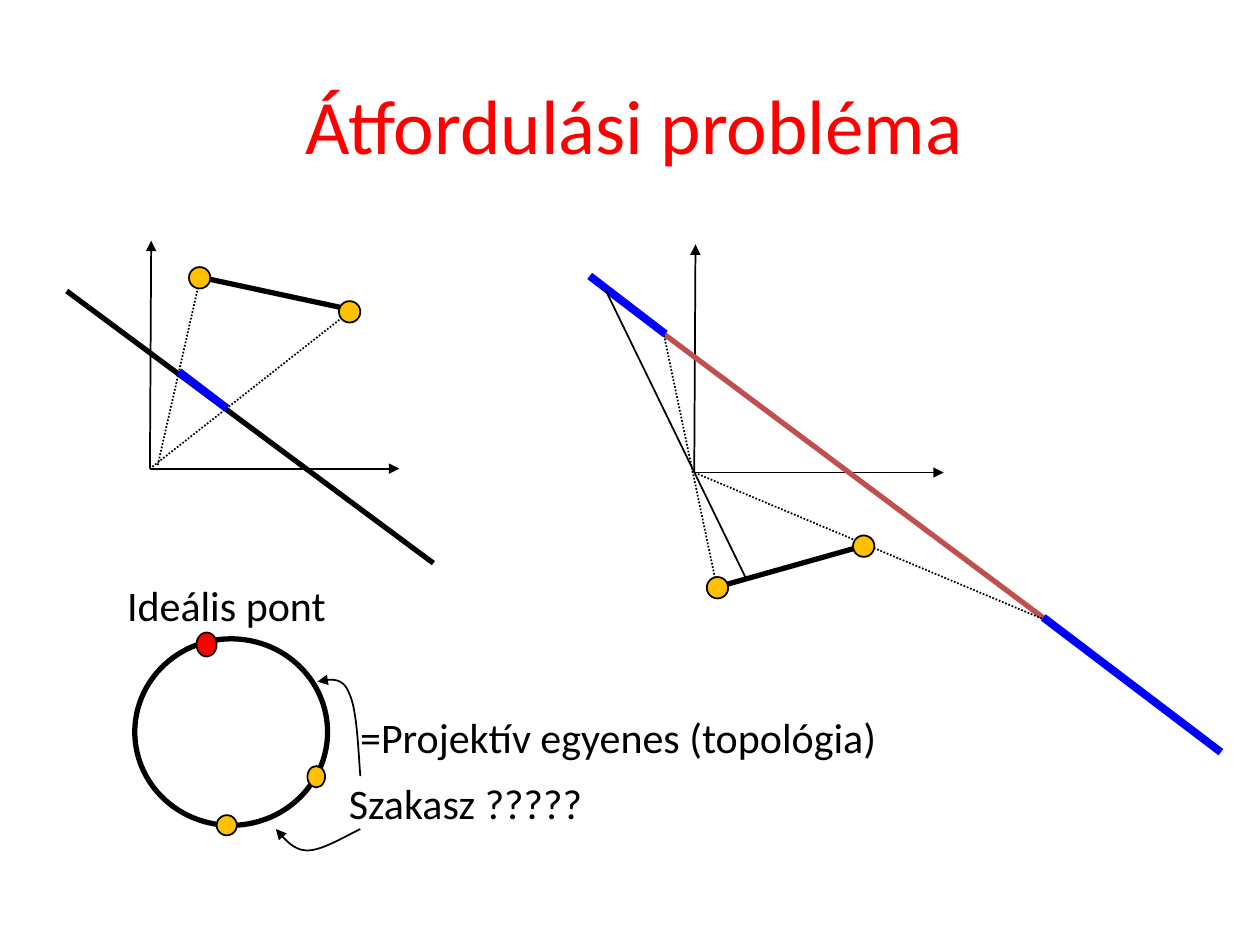
from dataclasses import dataclass

from lxml.etree import SubElement
from pptx import Presentation
from pptx.dml.color import RGBColor
from pptx.enum.dml import MSO_LINE
from pptx.enum.shapes import MSO_CONNECTOR, MSO_SHAPE
from pptx.enum.text import MSO_ANCHOR, MSO_AUTO_SIZE, PP_ALIGN
from pptx.oxml.ns import qn
from pptx.util import Emu, Pt

SCALE = 9144  # EMU in one px, 100 px to the inch


def px(value):
    return Emu(round(value * SCALE))


@dataclass(frozen=True)
class Theme:
    font: str = "Calibri"
    title_size: int = 44
    label_size: int = 24
    thin: float = 1
    thick: float = 3
    heavy: float = 4.5
    ink: str = "000000"
    red: str = "FF0000"
    blue: str = "0000FF"
    brick: str = "C0504D"
    amber: str = "FFC000"


def bezier(start, first, second, end, steps=16):
    """Points along a cubic curve, without its start."""
    for step in range(1, steps + 1):
        t = step / steps
        weights = ((1 - t) ** 3, 3 * t * (1 - t) ** 2, 3 * t * t * (1 - t), t ** 3)
        yield tuple(
            sum(weight * value for weight, value in zip(weights, axis))
            for axis in zip(start, first, second, end)
        )


class SlideBuilder:
    def __init__(self, slide, theme):
        self.slide = slide
        self.theme = theme

    def add_text(self, paragraph, text, size, color):
        run = paragraph.add_run()
        run.text = text
        run.font.name = self.theme.font
        run.font.size = Pt(size)
        run.font.color.rgb = RGBColor.from_string(color)

    def stroke(self, shape, color, width, dotted=False, arrow=False):
        shape.line.color.rgb = RGBColor.from_string(color)
        shape.line.width = Pt(width)
        if dotted:
            shape.line.dash_style = MSO_LINE.ROUND_DOT
        if arrow:
            outline = shape.element.spPr.find(qn("a:ln"))
            SubElement(outline, qn("a:tailEnd"), type="triangle")

    def title(self, text, left, top, width, height):
        shape = self.slide.shapes.title
        shape.left, shape.top = px(left), px(top)
        shape.width, shape.height = px(width), px(height)
        frame = shape.text_frame
        frame.vertical_anchor = MSO_ANCHOR.MIDDLE
        paragraph = frame.paragraphs[0]
        paragraph.alignment = PP_ALIGN.CENTER
        self.add_text(paragraph, text, self.theme.title_size, self.theme.red)

    def label(self, text, left, top, width, height=51):
        shape = self.slide.shapes.add_textbox(px(left), px(top), px(width), px(height))
        frame = shape.text_frame
        frame.word_wrap = False
        frame.auto_size = MSO_AUTO_SIZE.SHAPE_TO_FIT_TEXT
        self.add_text(frame.paragraphs[0], text, self.theme.label_size, self.theme.ink)

    def line(self, start, end, width=None, color=None, **style):
        connector = self.slide.shapes.add_connector(
            MSO_CONNECTOR.STRAIGHT, *map(px, start + end))
        self.stroke(connector, color or self.theme.ink, width or self.theme.thin, **style)
        SubElement(connector.element.spPr, qn("a:effectLst"))

    def axes(self, origin_x, origin_y):
        origin = (origin_x, origin_y)
        self.line(origin, (origin_x + 1, origin_y - 181), arrow=True)
        self.line(origin, (origin_x + 198, origin_y), arrow=True)

    def ellipse(self, left, top, width, height, fill=None, outline=None):
        shape = self.slide.shapes.add_shape(
            MSO_SHAPE.OVAL, px(left), px(top), px(width), px(height))
        shape.shadow.inherit = False
        if fill:
            shape.fill.solid()
            shape.fill.fore_color.rgb = RGBColor.from_string(fill)
        else:
            shape.fill.background()
        self.stroke(shape, self.theme.ink, outline or self.theme.thin)

    def curved_arrow(self, start, *curves):
        points, current = [], start
        for curve in curves:
            points.extend(bezier(current, *curve))
            current = curve[-1]
        builder = self.slide.shapes.build_freeform(*map(px, start))
        builder.add_line_segments([tuple(map(px, point)) for point in points], close=False)
        shape = builder.convert_to_shape()
        shape.shadow.inherit = False
        shape.fill.background()
        self.stroke(shape, self.theme.ink, self.theme.thin, arrow=True)


def main():
    theme = Theme()
    presentation = Presentation()
    presentation.slide_width, presentation.slide_height = px(1000), px(750)
    slide = presentation.slides.add_slide(presentation.slide_layouts[5])
    builder = SlideBuilder(slide, theme)

    builder.title("Átfordulási probléma", 43, 36, 921, 125)

    # Left diagram: the segment lies in front of the centre
    builder.axes(119, 372)
    builder.line((53, 231), (344, 447), theme.thick)
    builder.line((278, 247), (119, 372), dotted=True)
    builder.line((159, 220), (125, 370), dotted=True)
    builder.line((159, 220), (275, 245), theme.thick)
    builder.line((142, 295), (180, 324), theme.heavy, theme.blue)

    # Right diagram: the image wraps around through infinity
    builder.axes(551, 375)
    builder.line((484, 233), (952, 583), theme.thick, theme.brick)
    builder.line((827, 491), (551, 375), dotted=True)
    builder.line((569, 466), (686, 433), theme.thick)
    builder.line((527, 266), (569, 466), dotted=True)
    builder.line((468, 219), (528, 265), theme.heavy, theme.blue)
    builder.line((828, 490), (969, 597), theme.heavy, theme.blue)
    builder.line((593, 461), (480, 229))

    # Projective line drawn as a circle
    builder.ellipse(107, 507, 153, 148, outline=theme.thick)
    builder.ellipse(156, 502, 16, 19, theme.red)
    builder.label("=Projektív egyenes (topológia)", 276, 560, 435)
    builder.label("Ideális pont", 91, 455, 178)
    builder.label("Szakasz ?????", 267, 612, 211)
    builder.curved_arrow(
        (286, 616),
        ((284, 589), (283, 562), (277, 550)),
        ((272, 537), (262, 539), (252, 541)))
    builder.curved_arrow(
        (286, 658),
        ((270, 666), (255, 675), (244, 675)),
        ((233, 675), (226, 666), (219, 658)))

    # Segment end points
    for left, top in ((150, 212), (269, 239), (677, 425), (561, 458)):
        builder.ellipse(left, top, 17, 17, theme.amber)
    builder.ellipse(172, 647, 16, 16, theme.amber)
    builder.ellipse(244, 608, 14, 17, theme.amber)

    presentation.save("out.pptx")


if __name__ == "__main__":
    main()
